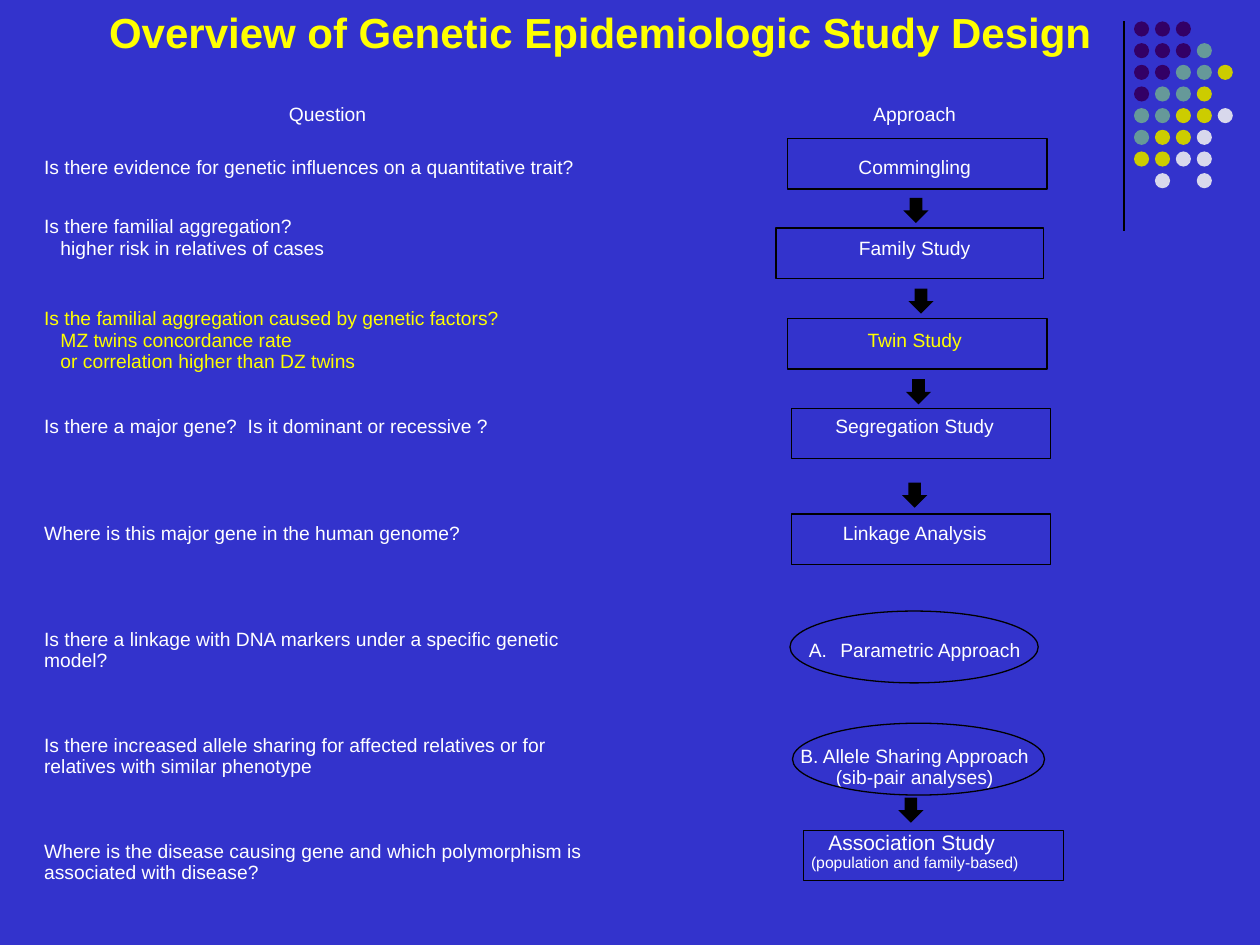
"""Build the slide on genetic epidemiologic study design."""
from dataclasses import dataclass

from lxml import etree
from pptx import Presentation
from pptx.dml.color import RGBColor
from pptx.enum.shapes import MSO_CONNECTOR, MSO_SHAPE
from pptx.enum.text import MSO_ANCHOR, PP_ALIGN
from pptx.oxml.ns import qn
from pptx.util import Inches, Pt

RECTANGLE = MSO_SHAPE.RECTANGLE
OVAL = MSO_SHAPE.OVAL
DOWN_ARROW = MSO_SHAPE.DOWN_ARROW
STRAIGHT = MSO_CONNECTOR.STRAIGHT
LEFT, CENTER = PP_ALIGN.LEFT, PP_ALIGN.CENTER
TOP, MIDDLE = MSO_ANCHOR.TOP, MSO_ANCHOR.MIDDLE

BLUE = RGBColor(0x33, 0x33, 0xCC)
BLACK = RGBColor(0, 0, 0)
WHITE = RGBColor(0xFF, 0xFF, 0xFF)
YELLOW = RGBColor(0xFF, 0xFF, 0)
DOT_COLORS = {
    "P": RGBColor(0x33, 0, 0x66),
    "T": RGBColor(0x66, 0x99, 0x99),
    "Y": RGBColor(0xCC, 0xCC, 0),
    "W": RGBColor(0xD8, 0xD8, 0xEC),
}
DOT_ROWS = ["PPP", "PPPT", "PPTTY", "PTTY", "TTYYW", "TYYW", "YYWW", " W W"]

FONT = "Arial"
BODY_SIZE = 11
LINE_HEIGHT = 0.17
NO_STYLE = "{2D5ABB26-0587-4C30-8999-92F81FD0307C}"


@dataclass
class Line:
    text: str
    size: int = BODY_SIZE
    indent: float = 0
    lettered: bool = False


@dataclass
class Entry:
    lines: list[Line]
    align: PP_ALIGN
    top: float = 0
    bottom: float = 0


@dataclass
class Row:
    height: float
    question: Entry
    approach: Entry
    color: RGBColor = WHITE


@dataclass
class Outline:
    kind: MSO_SHAPE
    left: float
    top: float
    width: float
    height: float


def ask(*lines: Line, bottom: float = 0) -> Entry:
    return Entry(list(lines), LEFT, bottom=bottom)


def use(*lines: Line, top: float = 0, bottom: float = 0) -> Entry:
    return Entry(list(lines), CENTER, top, bottom)


ROWS = [
    Row(0.32, Entry([Line("Question")], CENTER), use(Line("Approach"))),
    Row(0.53, ask(Line("Is there evidence for genetic influences on a quantitative trait?")),
        use(Line("Commingling"))),
    Row(0.75, ask(Line("Is there familial aggregation?"),
                  Line("higher risk in relatives of cases", indent=0.13), bottom=LINE_HEIGHT),
        use(Line("Family Study"))),
    Row(0.71, ask(Line("Is the familial aggregation caused by genetic factors?"),
                  Line("MZ twins concordance rate", indent=0.13),
                  Line("or correlation higher than DZ twins", indent=0.13)),
        use(Line("Twin Study")), YELLOW),
    Row(0.66, ask(Line("Is there a major gene?  Is it dominant or recessive ?")),
        use(Line("Segregation Study"))),
    Row(1.03, ask(Line("Where is this major gene in the human genome?")),
        use(Line("Linkage Analysis"))),
    Row(0.83, ask(Line("Is there a linkage with DNA markers under a specific genetic model?")),
        use(Line("Parametric Approach", indent=0.25, lettered=True))),
    Row(0.85, ask(Line("Is there increased allele sharing for affected relatives or for "
                       "relatives with similar phenotype")),
        use(Line("B. Allele Sharing Approach"), Line("(sib-pair analyses)"), top=LINE_HEIGHT)),
    Row(0.83, ask(Line("Where is the disease causing gene and which polymorphism is "
                       "associated with disease?")),
        use(Line("Association Study ", 12), Line("(population and family-based)", 9),
            bottom=LINE_HEIGHT)),
]
COLUMN_WIDTHS = [4.56, 4.76, 0.09]
SPACER_HEIGHT = 0.18

ARROWS = [(7.17, 1.57), (7.21, 2.29), (7.19, 3.01), (7.16, 3.83), (7.13, 6.33)]
OUTLINES = [
    Outline(RECTANGLE, 6.25, 1.1, 2.06, 0.4),
    Outline(RECTANGLE, 6.16, 1.81, 2.12, 0.4),
    Outline(RECTANGLE, 6.25, 2.53, 2.06, 0.4),
    Outline(RECTANGLE, 6.28, 3.24, 2.06, 0.4),
    Outline(RECTANGLE, 6.28, 4.08, 2.06, 0.4),
    Outline(OVAL, 6.27, 4.85, 1.97, 0.57),
    Outline(OVAL, 6.29, 5.74, 2, 0.57),
    Outline(RECTANGLE, 6.38, 6.59, 2.06, 0.4),
]


def format_font(font, size: int, color: RGBColor) -> None:
    font.name = FONT
    font.size = Pt(size)
    font.color.rgb = color


def draw_shape(page, outline: Outline, fill: RGBColor | None = None) -> None:
    shape = page.shapes.add_shape(outline.kind, Inches(outline.left), Inches(outline.top),
                                  Inches(outline.width), Inches(outline.height))
    shape.shadow.inherit = False
    if fill is None:
        shape.fill.background()
        shape.line.color.rgb = BLACK
        shape.line.width = Pt(0.75)
    else:
        shape.fill.solid()
        shape.fill.fore_color.rgb = fill
        shape.line.fill.background()


def draw_dots(page) -> None:
    rule = page.shapes.add_connector(STRAIGHT, Inches(8.92), Inches(0.17),
                                     Inches(8.92), Inches(1.83))
    rule.line.color.rgb = BLACK
    rule.line.width = Pt(0.75)
    etree.SubElement(rule._element.spPr, qn("a:effectLst"))
    for row, pattern in enumerate(DOT_ROWS):
        for column, key in enumerate(pattern):
            if key in DOT_COLORS:
                dot = Outline(OVAL, 9 + 0.166 * column, 0.17 + 0.172 * row, 0.12, 0.12)
                draw_shape(page, dot, DOT_COLORS[key])


def fill_cell(cell, entry: Entry, color: RGBColor) -> None:
    cell.margin_top, cell.margin_bottom = Inches(entry.top), Inches(entry.bottom)
    frame = cell.text_frame
    frame.text = "\n".join(line.text for line in entry.lines)
    for paragraph, line in zip(frame.paragraphs, entry.lines):
        paragraph.alignment = entry.align
        format_font(paragraph.runs[0].font, line.size, color)
        properties = paragraph._p.get_or_add_pPr()
        if line.indent:
            properties.set("marL", str(Inches(line.indent)))
        if line.lettered:
            properties.set("indent", str(-Inches(line.indent)))
            etree.SubElement(properties, qn("a:buAutoNum"), type="alphaUcPeriod")


def draw_table(page) -> None:
    heights = [SPACER_HEIGHT] + [row.height for row in ROWS]
    table = page.shapes.add_table(len(heights), len(COLUMN_WIDTHS), Inches(0.32), Inches(0.56),
                                  Inches(sum(COLUMN_WIDTHS)), Inches(sum(heights))).table
    table.first_row = table.horz_banding = False
    table._tbl.tblPr.find(qn("a:tableStyleId")).text = NO_STYLE
    for column, width in zip(table.columns, COLUMN_WIDTHS):
        column.width = Inches(width)
    for table_row, height in zip(table.rows, heights):
        table_row.height = Inches(height)
    for cell in table.iter_cells():
        cell.fill.background()
        cell.vertical_anchor = MIDDLE
        cell.margin_left = cell.margin_right = Inches(0.03)
        cell.margin_top = cell.margin_bottom = 0
        etree.SubElement(cell.text_frame.paragraphs[0]._p, qn("a:endParaRPr"),
                         sz=str(BODY_SIZE * 100))
    table.cell(0, 0).merge(table.cell(0, len(COLUMN_WIDTHS) - 1))
    for index, row in enumerate(ROWS, start=1):
        fill_cell(table.cell(index, 0), row.question, row.color)
        fill_cell(table.cell(index, 1), row.approach, row.color)


def draw_title(page) -> None:
    title = page.shapes.title
    title.left, title.top = Inches(-0.12), Inches(0)
    title.width, title.height = Inches(9.77), Inches(0.91)
    frame = title.text_frame
    frame.text = "Overview of Genetic Epidemiologic Study Design"
    frame.vertical_anchor = TOP
    paragraph = frame.paragraphs[0]
    paragraph.alignment = CENTER
    format_font(paragraph.runs[0].font, 24, YELLOW)
    paragraph.runs[0].font.bold = True


def main() -> None:
    deck = Presentation()
    deck.slide_width, deck.slide_height = Inches(10), Inches(7.5)
    page = deck.slides.add_slide(deck.slide_layouts[5])
    page.background.fill.solid()
    page.background.fill.fore_color.rgb = BLUE
    draw_dots(page)
    draw_table(page)
    draw_title(page)
    for left, top in ARROWS:
        draw_shape(page, Outline(DOWN_ARROW, left, top, 0.2, 0.2), BLACK)
    for outline in OUTLINES:
        draw_shape(page, outline)
    deck.save("out.pptx")


if __name__ == "__main__":
    main()
